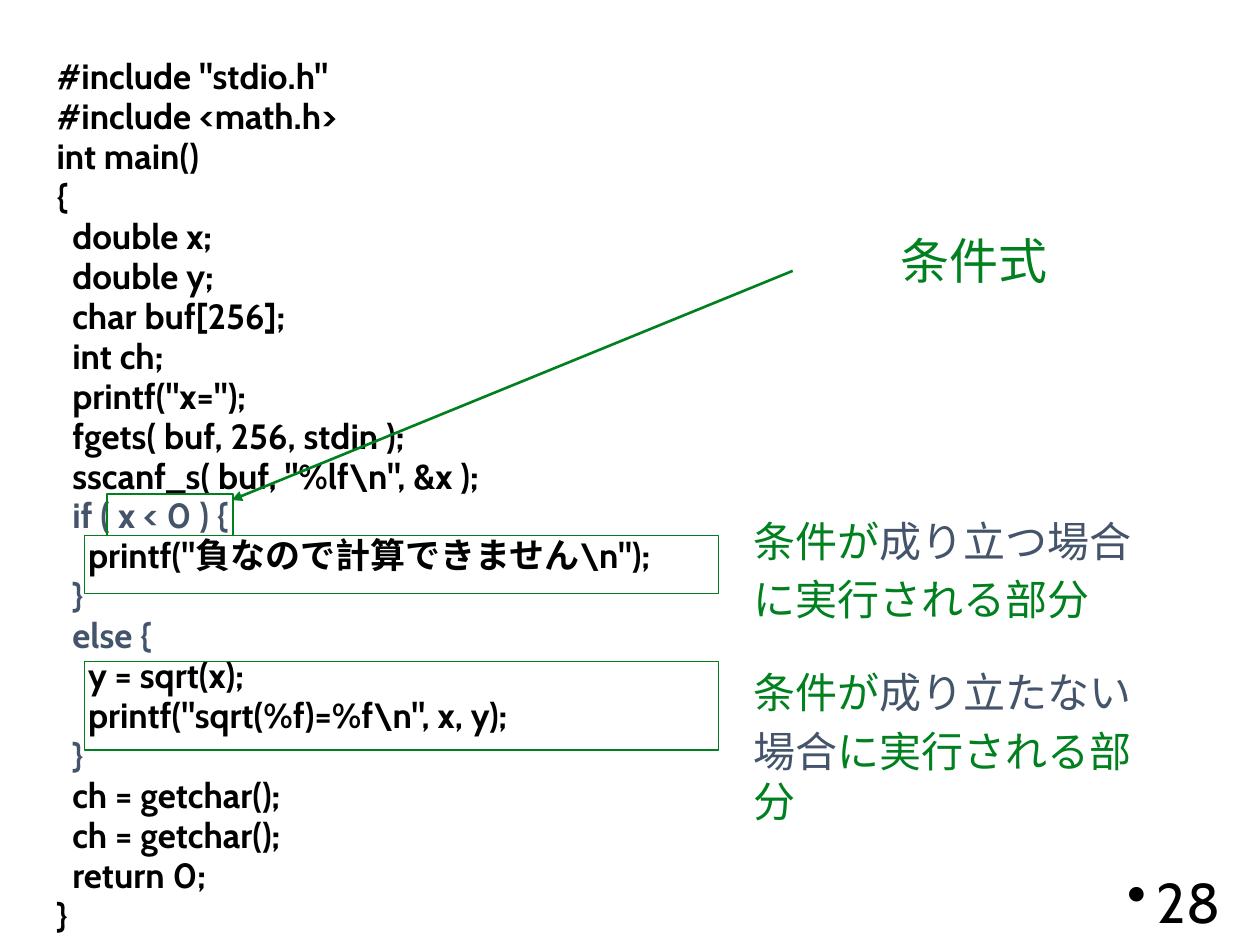
from lxml.etree import SubElement
from pptx import Presentation
from pptx.dml.color import RGBColor
from pptx.enum.shapes import MSO_CONNECTOR as CONN, MSO_SHAPE as SHAPE
from pptx.enum.text import MSO_ANCHOR as ANCHOR, PP_ALIGN as ALIGN
from pptx.oxml.ns import qn
from pptx.util import Cm, Pt

COLORS = {"text": "000000", "accent": "00801E", "branch": "44546A"}
FONT = "Cabin"

CODE = r'''#include "stdio.h"
#include <math.h>
int main()
{
  double x;
  double y;
  char buf[256];
  int ch;
  printf("x=");
  fgets( buf, 256, stdin );
  sscanf_s( buf, "%lf\n", &x );
  if ( x < 0 ) {
    printf("負なので計算できません\n");
  }
  else {
    y = sqrt(x);
    printf("sqrt(%f)=%f\n", x, y);
  }
  ch = getchar();
  ch = getchar();
  return 0;
}'''
BRANCH_STARTS = ("  if", "  else", "  }")

# Left, top, width, height in cm
FRAMES = [
    (2.16, 9.96, 2.54, 0.84),     # condition
    (1.7, 10.8, 12.78, 1.17),     # true branch
    (1.7, 13.34, 12.78, 1.78),    # false branch
]

# Box, size, lines of (text, colour)
LABELS = [
    ((17.91, 4.52, 3.48, 1.45), 28, [[("条件式", "accent")]]),
    ((14.94, 10.26, 8.92, 2.64), 24,
     [[("条件が", "accent"), ("成り立つ場合", "branch")],
      [("に実行される部分", "accent")]]),
    ((14.94, 13.31, 8.92, 3.73), 24,
     [[("条件が", "accent"), ("成り立たない", "branch")],
      [("場合", "branch"), ("に実行される部分", "accent")]]),
]


def rgb(name):
    return RGBColor.from_string(COLORS[name])


def add_text(slide, box, size, lines, wrap=False, bold=False):
    """Add a text box with one paragraph per line of coloured runs."""
    tf = slide.shapes.add_textbox(*map(Cm, box)).text_frame
    tf.word_wrap = wrap
    for i, line in enumerate(lines):
        p = tf.add_paragraph() if i else tf.paragraphs[0]
        for text, color in line:
            r = p.add_run()
            r.text = text
            r.font.name = FONT
            r.font.size = Pt(size)
            r.font.bold = bold
            r.font.color.rgb = rgb(color)
    return tf


def add_code(slide):
    lines = [[(line, "branch" if line.startswith(BRANCH_STARTS) else "text")]
             for line in CODE.split("\n")]
    tf = add_text(slide, (0.89, 1.04, 21.77, 18.14), 20, lines,
                  wrap=True, bold=True)
    for p in tf.paragraphs:
        p.line_spacing = 0.95


def add_label(slide, box, size, lines):
    tf = add_text(slide, box, size, lines)
    for p in tf.paragraphs[1:]:
        p.space_before = Pt(size * 0.2)


def add_frame(slide, box):
    sp = slide.shapes.add_shape(SHAPE.RECTANGLE, *map(Cm, box))
    sp.shadow.inherit = False
    sp.fill.background()
    sp.line.color.rgb = rgb("accent")
    sp.line.width = Pt(0.75)


def add_arrow(slide, tip, tail):
    """Draw a line whose arrowhead is at the tip."""
    line = slide.shapes.add_connector(CONN.STRAIGHT, *map(Cm, tip + tail))
    line.line.color.rgb = rgb("accent")
    line.line.width = Pt(1.5)
    SubElement(line.line._get_or_add_ln(), qn("a:headEnd"), type="triangle")
    SubElement(line._element.spPr, qn("a:effectLst"))


def add_page_number(slide, number):
    tf = add_text(slide, (19.13, 17.65, 5.72, 1.02), 32,
                  [[(number, "text")]], wrap=True)
    tf.vertical_anchor = ANCHOR.MIDDLE
    p = tf.paragraphs[0]
    p.alignment = ALIGN.RIGHT
    SubElement(p._p.get_or_add_pPr(), qn("a:buChar"), char="•")


def main():
    prs = Presentation()
    prs.slide_width, prs.slide_height = Cm(25.4), Cm(19.05)
    slide = prs.slides.add_slide(prs.slide_layouts[6])

    # Program listing
    add_code(slide)

    # Marked parts and their explanations
    for box in FRAMES:
        add_frame(slide, box)
    add_arrow(slide, (4.67, 10.08), (15.98, 5.46))
    for box, size, lines in LABELS:
        add_label(slide, box, size, lines)

    add_page_number(slide, "28")
    prs.save("out.pptx")


if __name__ == "__main__":
    main()
